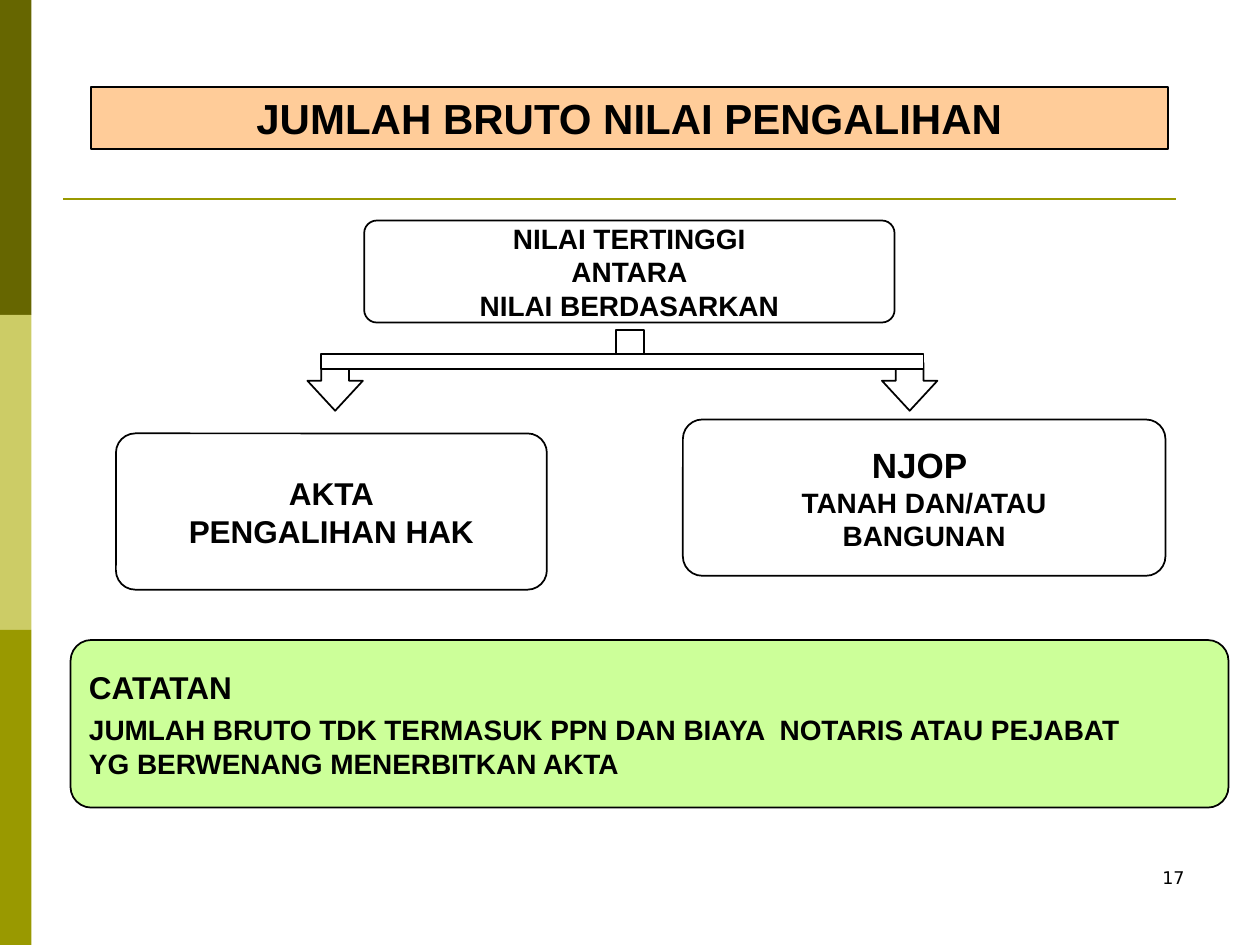
from pptx import Presentation
from pptx.dml.color import RGBColor
from pptx.enum.shapes import MSO_CONNECTOR, MSO_SHAPE
from pptx.enum.text import MSO_ANCHOR, MSO_AUTO_SIZE, PP_ALIGN
from pptx.oxml.ns import qn
from pptx.util import Inches, Pt
from lxml import etree

BLACK = RGBColor(0x00, 0x00, 0x00)
WHITE = RGBColor(0xFF, 0xFF, 0xFF)
PEACH = RGBColor(0xFF, 0xCC, 0x99)
GREEN = RGBColor(0xCC, 0xFF, 0x99)
DARK_OLIVE = RGBColor(0x66, 0x66, 0x00)
LIGHT_OLIVE = RGBColor(0xCC, 0xCC, 0x66)
OLIVE = RGBColor(0x99, 0x99, 0x00)


def add_text(tf, text, size=16, font="Arial", bold=True,
             align=PP_ALIGN.CENTER, before=0):
    """Fill the empty first paragraph, or append a new one."""
    p = tf.paragraphs[0] if not tf.text else tf.add_paragraph()
    p.alignment = align
    p.space_before = Pt(before)
    r = p.add_run()
    r.text = text
    r.font.size = Pt(size)
    r.font.name = font
    r.font.bold = bold
    r.font.color.rgb = BLACK


def add_box(s, kind, box, fill=WHITE, outlined=True, adjust=()):
    sp = s.shapes.add_shape(kind, *map(Inches, box))
    sp.shadow.inherit = False
    sp.fill.solid()
    sp.fill.fore_color.rgb = fill
    if outlined:
        sp.line.color.rgb = BLACK
        sp.line.width = Pt(1)
    else:
        sp.line.fill.background()
    for i, value in enumerate(adjust):
        sp.adjustments[i] = value
    return sp


def add_card(s, box, lines, fill=WHITE, align=PP_ALIGN.CENTER):
    """Rounded box with lines of (text, size, space before)."""
    sp = add_box(s, MSO_SHAPE.ROUNDED_RECTANGLE, box, fill, adjust=[0.124])
    tf = sp.text_frame
    tf.word_wrap = True
    tf.vertical_anchor = MSO_ANCHOR.MIDDLE
    for text, size, before in lines:
        add_text(tf, text, size=size, align=align, before=before)


def add_side_band(s, left, top, width, height):
    colors = (DARK_OLIVE, LIGHT_OLIVE, OLIVE)
    step = height / len(colors)
    for i, color in enumerate(colors):
        add_box(s, MSO_SHAPE.RECTANGLE, (left, top + i * step, width, step),
                color, outlined=False)


def add_rule(s, left, right, y):
    line = s.shapes.add_connector(MSO_CONNECTOR.STRAIGHT, Inches(left),
                                  Inches(y), Inches(right), Inches(y))
    line.line.color.rgb = OLIVE
    line.line.width = Pt(1.5)
    etree.SubElement(line._element.spPr, qn("a:effectLst"))


def format_title(s, left, top, width, height):
    sp = s.shapes.title
    sp.left, sp.top = Inches(left), Inches(top)
    sp.width, sp.height = Inches(width), Inches(height)
    sp.fill.solid()
    sp.fill.fore_color.rgb = PEACH
    sp.line.color.rgb = BLACK
    sp.line.width = Pt(1)
    tf = sp.text_frame
    tf.word_wrap = True
    tf.auto_size = MSO_AUTO_SIZE.NONE
    tf.vertical_anchor = MSO_ANCHOR.MIDDLE
    add_text(tf, "JUMLAH BRUTO NILAI PENGALIHAN", size=24)


def add_branch(s, left, top, width, height):
    """Stem, two arrows at the ends, and the bar that joins them."""
    arrow_w, arrow_h, bar_h = 0.44, 0.38, 0.12
    bar_top = top + 0.19
    add_box(s, MSO_SHAPE.DOWN_ARROW, (4.78, top, arrow_w, 0.31),
            adjust=[0.5, 0])
    for x in (left, left + width - arrow_w):
        add_box(s, MSO_SHAPE.DOWN_ARROW,
                (x, top + height - arrow_h, arrow_w, arrow_h),
                adjust=[0.5, 0.626])
    inset = arrow_w / 4
    add_box(s, MSO_SHAPE.RECTANGLE,
            (left + inset, bar_top, width - 2 * inset, bar_h))


def add_page_number(s, box):
    tf = s.shapes.add_textbox(*map(Inches, box)).text_frame
    tf.word_wrap = True
    add_text(tf, "17", size=10, font="DejaVu Sans", bold=False,
             align=PP_ALIGN.RIGHT)


def main():
    prs = Presentation()
    prs.slide_width, prs.slide_height = Inches(10), Inches(7.5)
    s = prs.slides.add_slide(prs.slide_layouts[5])

    add_side_band(s, 0, 0, 0.25, 7.5)
    add_rule(s, 0.5, 9.33, 1.58)
    format_title(s, 0.72, 0.69, 8.55, 0.49)
    add_card(s, (2.89, 1.75, 4.21, 0.81),
             [("NILAI TERTINGGI", 16, 0), ("ANTARA", 16, 0),
              ("NILAI BERDASARKAN", 16, 0)])
    add_branch(s, 2.44, 2.62, 5, 0.64)
    add_card(s, (0.92, 3.44, 3.42, 1.24),
             [("AKTA", 18, 0), ("PENGALIHAN HAK", 18, 0)])
    add_card(s, (5.42, 3.33, 3.83, 1.24),
             [("NJOP ", 20, 0), ("TANAH DAN/ATAU", 16, 0),
              ("BANGUNAN", 16, 0)])
    add_card(s, (0.56, 5.08, 9.19, 1.33),
             [("CATATAN", 18, 0),
              ("JUMLAH BRUTO TDK TERMASUK PPN DAN BIAYA  NOTARIS ATAU PEJABAT",
               16, 4),
              ("YG BERWENANG MENERBITKAN AKTA", 16, 0)],
             GREEN, PP_ALIGN.LEFT)
    add_page_number(s, (7.17, 6.83, 2.33, 0.5))

    prs.save("out.pptx")


if __name__ == "__main__":
    main()
